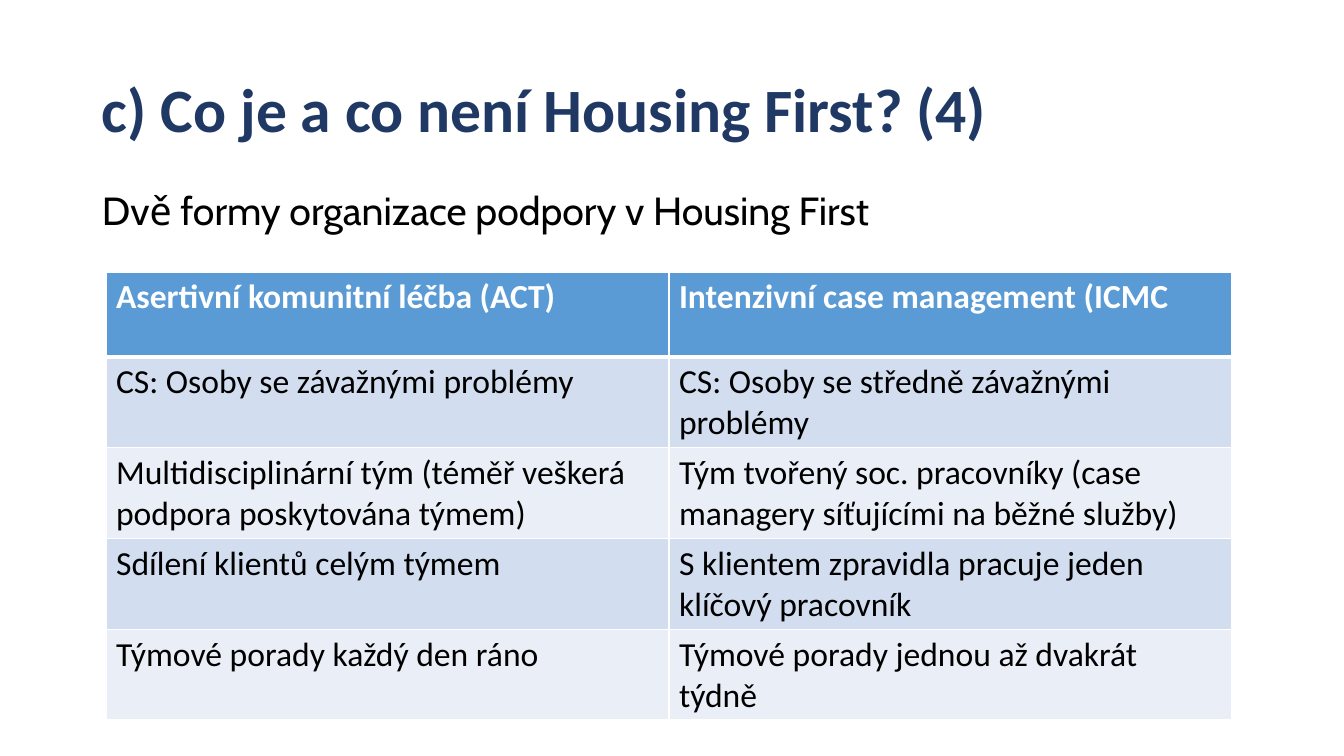
from pptx import Presentation
from pptx.dml.color import RGBColor as Rgb
from pptx.enum.text import MSO_ANCHOR as Anchor
from pptx.oxml import parse_xml
from pptx.oxml.ns import nsdecls
from pptx.util import Emu, Pt

HUE = {"navy": "203864", "black": "000000", "white": "FFFFFF",
       "head": "5B9BD5", "dark": "D2DEEF", "light": "EAEFF7"}
DOT = 914400 / 100.8


def px(num):
    return Emu(round(num * DOT))


def write(para, text, font, size, hue, bold=False):
    run = para.add_run()
    run.text = text
    run.font.name = font
    run.font.size = Pt(size)
    run.font.bold = bold
    run.font.color.rgb = Rgb.from_string(HUE[hue])


deck = Presentation()
deck.slide_width, deck.slide_height = px(1344), px(756)
slide = deck.slides.add_slide(deck.slide_layouts[6])

heads = [
    (40, 146, Anchor.MIDDLE, 0, "c) Co je a co není Housing First? (4)",
     "Calibri", 44, "navy", True),
    (187, 510, Anchor.TOP, 10, "Dvě formy organizace podpory v Housing First",
     "Cabin", 28, "black", False),
]
for top, high, anchor, gap, *style in heads:
    frame = slide.shapes.add_textbox(px(92), px(top), px(1159), px(high)).text_frame
    frame.word_wrap = True
    frame.vertical_anchor = anchor
    para = frame.paragraphs[0]
    para.line_spacing = 0.9
    para.space_before = Pt(gap)
    write(para, *style)

rows = [
    ("Asertivní komunitní léčba (ACT)", "Intenzivní case management (ICMC"),
    ("CS: Osoby se závažnými problémy", "CS: Osoby se středně závažnými problémy"),
    ("Multidisciplinární tým (téměř veškerá podpora poskytována týmem)",
     "Tým tvořený soc. pracovníky (case managery síťujícími na běžné služby)"),
    ("Sdílení klientů celým týmem",
     "S klientem zpravidla pracuje jeden klíčový pracovník"),
    ("Týmové porady každý den ráno", "Týmové porady jednou až dvakrát týdně"),
]
grid = slide.shapes.add_table(len(rows), 2, px(106), px(272), px(1126), px(425)).table
for row, texts in enumerate(rows):
    grid.rows[row].height = px(85)
    fill = "head" if row == 0 else ("light", "dark")[row % 2]
    for col, text in enumerate(texts):
        cell = grid.cell(row, col)
        props = cell._tc.get_or_add_tcPr()
        for side in "LRTB":
            thick = 3 if (row, side) in ((0, "B"), (1, "T")) else 1
            props.append(parse_xml(
                f'<a:ln{side} {nsdecls("a")} w="{Pt(thick)}"><a:solidFill>'
                f'<a:srgbClr val="{HUE["white"]}"/></a:solidFill></a:ln{side}>'))
        cell.fill.solid()
        cell.fill.fore_color.rgb = Rgb.from_string(HUE[fill])
        write(cell.text_frame.paragraphs[0], text, "Calibri", 24,
              "black" if row else "white", row == 0)

deck.save("out.pptx")
